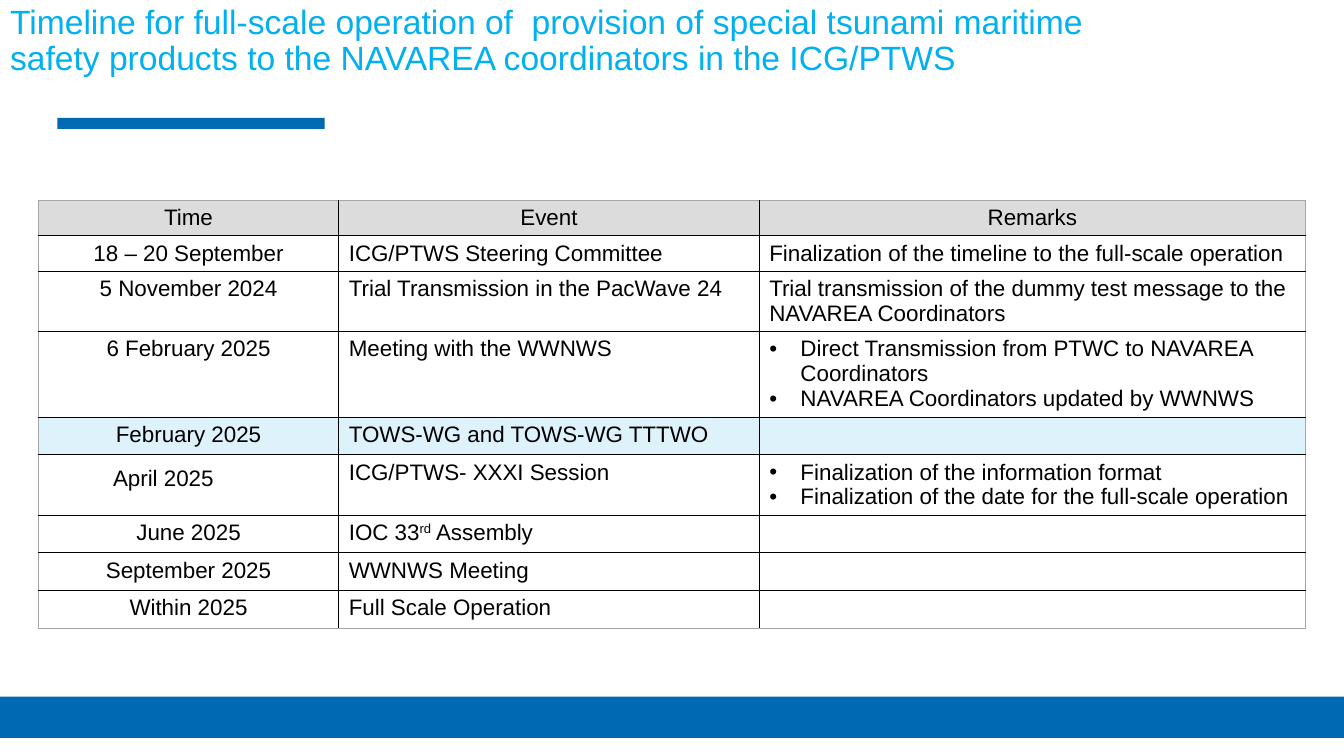
from lxml.etree import SubElement
from pptx import Presentation
from pptx.dml.color import RGBColor
from pptx.enum.shapes import MSO_SHAPE as Shape
from pptx.enum.text import MSO_ANCHOR as Anchor, MSO_AUTO_SIZE as Fit, PP_ALIGN as Align
from pptx.oxml.ns import qn
from pptx.util import Inches, Pt

TITLE = ("Timeline for full-scale operation of  provision of special tsunami maritime "
         "safety products to the NAVAREA coordinators in the ICG/PTWS")
# A remark given as a list is bulleted; text between carets is raised.
HEAD = ("Time", "Event", "Remarks")
ROWS = [
    ("18 – 20 September", "ICG/PTWS Steering Committee",
     "Finalization of the timeline to the full-scale operation"),
    ("5 November 2024", "Trial Transmission in the PacWave 24",
     "Trial transmission of the dummy test message to the NAVAREA Coordinators"),
    ("6 February 2025", "Meeting with the WWNWS",
     ["Direct Transmission from PTWC to NAVAREA Coordinators",
      "NAVAREA Coordinators updated by WWNWS"]),
    ("February 2025", "TOWS-WG and TOWS-WG TTTWO", ""),
    ("April 2025", "ICG/PTWS- XXXI Session",
     ["Finalization of the information format",
      "Finalization of the date for the full-scale operation"]),
    ("June 2025", "IOC 33^rd^ Assembly", ""),
    ("September 2025", "WWNWS Meeting", ""),
    ("Within 2025", "Full Scale Operation", ""),
]
LINES = (1, 1, 2, 3, 1, 2, 1, 1, 1)
WIDTHS = (2.98, 4.17, 5.42)
MARKED, SHIFTED = 4, 5
BARS = [(0.57, 1.17, 2.65, 0.11), (0, 6.91, 13.33, 0.41)]
COLORS = {"bar": "0069B4", "title": "00B0F0", "text": "000000", "head": "DCDCDC",
          "mark": "DDF2FB", "plain": "FFFFFF", "grid": "000000", "edge": "A6A6A6"}
FONT = "Arial"


def color(name):
    return RGBColor.from_string(COLORS[name])


def style(font, size, name):
    font.name, font.size, font.bold = FONT, Pt(size), False
    font.color.rgb = color(name)


def add_bullet(para):
    props = para._p.get_or_add_pPr()
    props.set("marL", str(Inches(0.31)))
    props.set("indent", str(-Inches(0.31)))
    SubElement(props, qn("a:buFont"), typeface=FONT)
    SubElement(props, qn("a:buChar"), char="•")


def add_borders(cell, sides):
    """Draw the four sides; outer ones are thin and grey."""
    props = cell._tc.get_or_add_tcPr()
    for side, outer in sides.items():
        line = SubElement(props, qn("a:ln" + side), w=str(Pt(0.5 if outer else 1)))
        fill = SubElement(line, qn("a:solidFill"))
        SubElement(fill, qn("a:srgbClr"), val=COLORS["edge" if outer else "grid"])


def fill_text(cell, text, center):
    items = text if isinstance(text, list) else [text]
    frame = cell.text_frame
    for i, item in enumerate(items):
        para = frame.add_paragraph() if i else frame.paragraphs[0]
        para.alignment = Align.CENTER if center else Align.LEFT
        if isinstance(text, list):
            add_bullet(para)
        if not item:
            SubElement(para._p, qn("a:endParaRPr"), sz="1600")
            continue
        for j, part in enumerate(item.split("^")):
            run = para.add_run()
            run.text = part
            style(run.font, 16, "text")
            if j % 2:
                run.font._element.set("baseline", "30000")


def add_timeline(slide):
    data = [HEAD] + ROWS
    high = [0.25 * n + 0.1 for n in LINES]
    box = map(Inches, (0.38, 1.99, sum(WIDTHS), sum(high)))
    table = slide.shapes.add_table(len(data), len(WIDTHS), *box).table
    table.first_row = table.horz_banding = False
    for col, width in zip(table.columns, WIDTHS):
        col.width = Inches(width)
    for r, row in enumerate(data):
        table.rows[r].height = Inches(high[r])
        tint = "head" if r == 0 else "mark" if r == MARKED else "plain"
        for c, text in enumerate(row):
            cell = table.cell(r, c)
            add_borders(cell, {"L": c == 0, "R": c == len(row) - 1,
                               "T": r == 0, "B": r == len(data) - 1})
            cell.fill.solid()
            cell.fill.fore_color.rgb = color(tint)
            fill_text(cell, text, r == 0 or c == 0)
    april = table.cell(SHIFTED, 0)
    april.margin_right, april.margin_top = Inches(0.6), Inches(0.11)


def add_title(slide):
    title = slide.shapes.title
    title.left, title.top, title.width, title.height = map(Inches, (0, 0, 11.07, 1.17))
    frame = title.text_frame
    frame.text = TITLE
    frame.word_wrap, frame.auto_size = True, Fit.NONE
    frame.vertical_anchor = Anchor.TOP
    para = frame.paragraphs[0]
    para.alignment, para.line_spacing = Align.LEFT, 0.9
    style(para.runs[0].font, 24, "title")


def add_bar(slide, box):
    bar = slide.shapes.add_shape(Shape.RECTANGLE, *map(Inches, box))
    bar.shadow.inherit = False
    bar.fill.solid()
    bar.fill.fore_color.rgb = color("bar")
    bar.line.fill.background()


def main():
    deck = Presentation()
    deck.slide_width, deck.slide_height = Inches(13.33), Inches(7.5)
    slide = deck.slides.add_slide(deck.slide_layouts[5])
    for box in BARS:
        add_bar(slide, box)
    add_title(slide)
    add_timeline(slide)
    deck.save("out.pptx")


if __name__ == "__main__":
    main()
